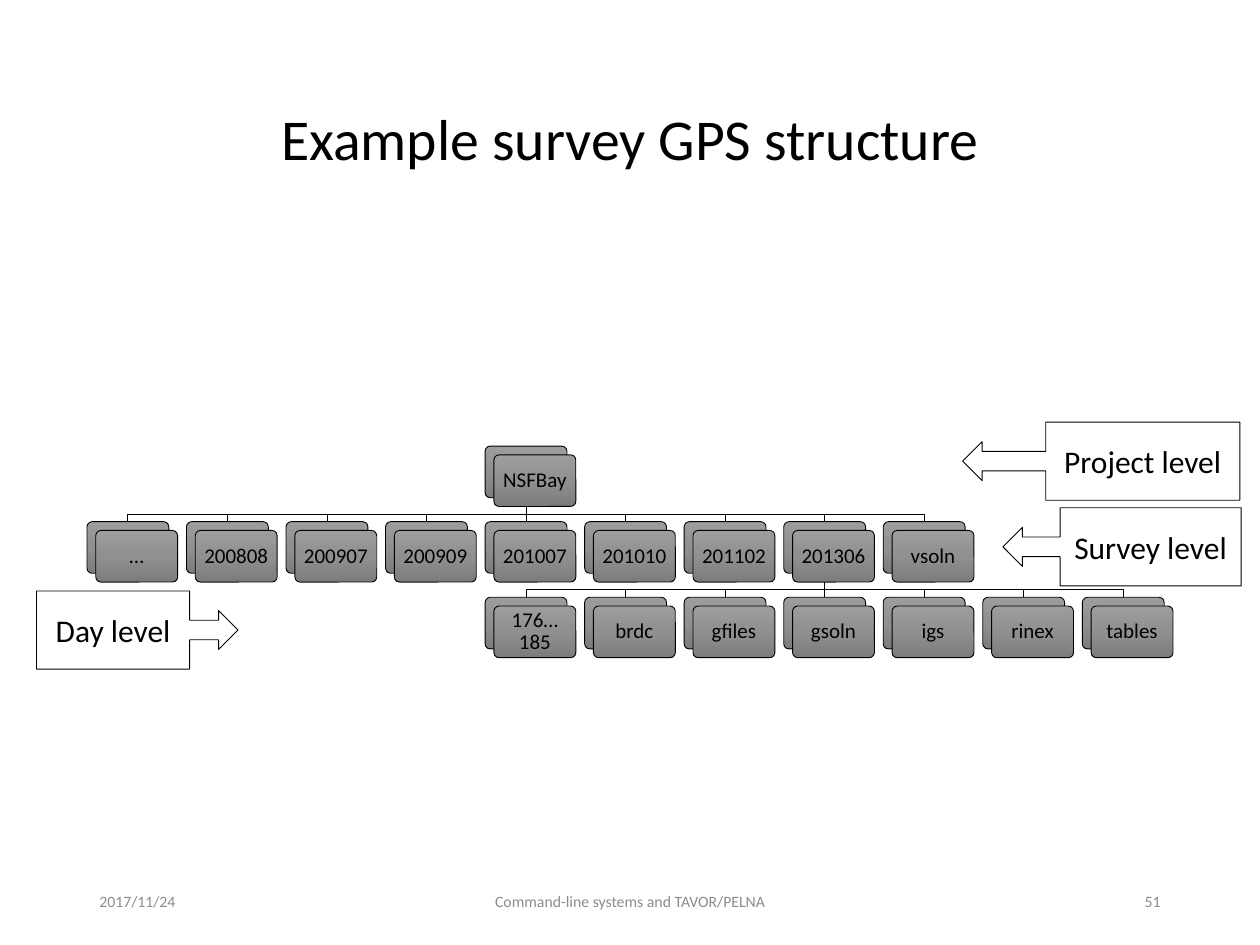
from copy import deepcopy

from pptx import Presentation
from pptx.dml.color import RGBColor
from pptx.enum.shapes import MSO_SHAPE
from pptx.enum.text import MSO_ANCHOR, PP_ALIGN
from pptx.oxml.ns import qn
from pptx.util import Inches, Pt

ROUND = MSO_SHAPE.ROUNDED_RECTANGLE
LEFT_CALL = MSO_SHAPE.LEFT_ARROW_CALLOUT
RIGHT_CALL = MSO_SHAPE.RIGHT_ARROW_CALLOUT
MIDDLE = MSO_ANCHOR.MIDDLE
LEFT, CENTER, RIGHT = PP_ALIGN.LEFT, PP_ALIGN.CENTER, PP_ALIGN.RIGHT

THEME = {
    "font": "Calibri",
    "ink": RGBColor(0x00, 0x00, 0x00),
    "muted": RGBColor(0x8C, 0x8C, 0x8C),
    "grays": [RGBColor.from_string(c) for c in ("9D9D9D", "909090", "7C7C7C")],
    "title": Pt(33),
    "label": Pt(18),
    "card": Pt(12),
    "foot": Pt(9),
    "line": Pt(0.5),
}

# Card grid, in inches
MARGIN, TOP = 0.69, 3.54
COL, ROW = 0.79, 0.6
CARD_W, CARD_H = 0.65, 0.41
SHIFT = 0.07
BEND = 0.13

# First column, column of the parent, names
TIERS = [
    (4, None, ["NSFBay"]),
    (0, 4, ["…", "200808", "200907", "200909", "201007", "201010",
            "201102", "201306", "vsoln"]),
    (4, 7, ["176…185", "brdc", "gfiles", "gsoln", "igs", "rinex", "tables"]),
]


def write(shape, text, size, color=THEME["ink"], align=CENTER):
    frame = shape.text_frame
    frame.word_wrap = True
    frame.vertical_anchor = MIDDLE
    para = frame.paragraphs[0]
    para.text = text
    para.alignment = align
    para.font.name = THEME["font"]
    para.font.size = THEME[size]
    para.font.color.rgb = color
    return frame


def outline(shape):
    shape.shadow.inherit = False
    shape.fill.background()
    shape.line.color.rgb = THEME["ink"]
    shape.line.width = THEME["line"]


prs = Presentation()
prs.slide_width, prs.slide_height = Inches(10), Inches(7.5)
slide = prs.slides.add_slide(prs.slide_layouts[5])
shapes = slide.shapes

title = shapes.title
title.left, title.top = Inches(MARGIN), Inches(0.4)
title.width, title.height = Inches(8.62), Inches(1.45)
write(title, "Example survey GPS structure", "title").paragraphs[0].line_spacing = 0.9

# Links from each parent down to its children
for row, (first, parent, names) in enumerate(TIERS):
    if parent is None:
        continue
    start = MARGIN + parent * COL + CARD_W / 2
    end_y = TOP + row * ROW
    start_y = end_y - ROW + CARD_H
    for col in range(first, first + len(names)):
        end = MARGIN + col * COL + CARD_W / 2
        points = [(start, start_y + BEND), (end, start_y + BEND), (end, end_y)]
        pen = shapes.build_freeform(Inches(start), Inches(start_y))
        pen.add_line_segments([(Inches(x), Inches(y)) for x, y in points], close=False)
        outline(pen.convert_to_shape())

# Each card is a pair of stacked rectangles, the front one named
for row, (first, parent, names) in enumerate(TIERS):
    for col, name in enumerate(names, first):
        for shift in (0, SHIFT):
            card = shapes.add_shape(
                ROUND, Inches(MARGIN + col * COL + shift), Inches(TOP + row * ROW + shift),
                Inches(CARD_W), Inches(CARD_H))
            card.adjustments[0] = 0.1
            outline(card)
            card.fill.gradient()
            card.fill.gradient_angle = 270
            stops = card._element.spPr.find(".//" + qn("a:gsLst"))
            stops.insert(1, deepcopy(stops[0]))
            for stop, place, gray in zip(card.fill.gradient_stops, (0, 0.5, 1), THEME["grays"]):
                stop.position = place
                stop.color.rgb = gray
        frame = write(card, name, "card")
        frame.paragraphs[0].line_spacing = 0.9
        frame.margin_left = frame.margin_right = Inches(0.05)
        frame.margin_top = frame.margin_bottom = Inches(0.05)

for text, left, width, align in [
    ("2017/11/24", MARGIN, 2.25, LEFT),
    ("Command-line systems and TAVOR/PELNA", 3.31, 3.38, CENTER),
    ("51", 7.06, 2.25, RIGHT),
]:
    box = shapes.add_textbox(Inches(left), Inches(6.95), Inches(width), Inches(0.4))
    write(box, text, "foot", THEME["muted"], align)

for text, kind, left, top, width, share in [
    ("Project level", LEFT_CALL, 7.64, 3.35, 2.2, 0.7),
    ("Survey level", LEFT_CALL, 7.96, 4.03, 1.89, 0.76),
    ("Day level", RIGHT_CALL, 0.29, 4.69, 1.6, 0.76),
]:
    call = shapes.add_shape(kind, Inches(left), Inches(top), Inches(width), Inches(0.62))
    call.adjustments[3] = share
    outline(call)
    write(call, text, "label")

prs.save("out.pptx")
